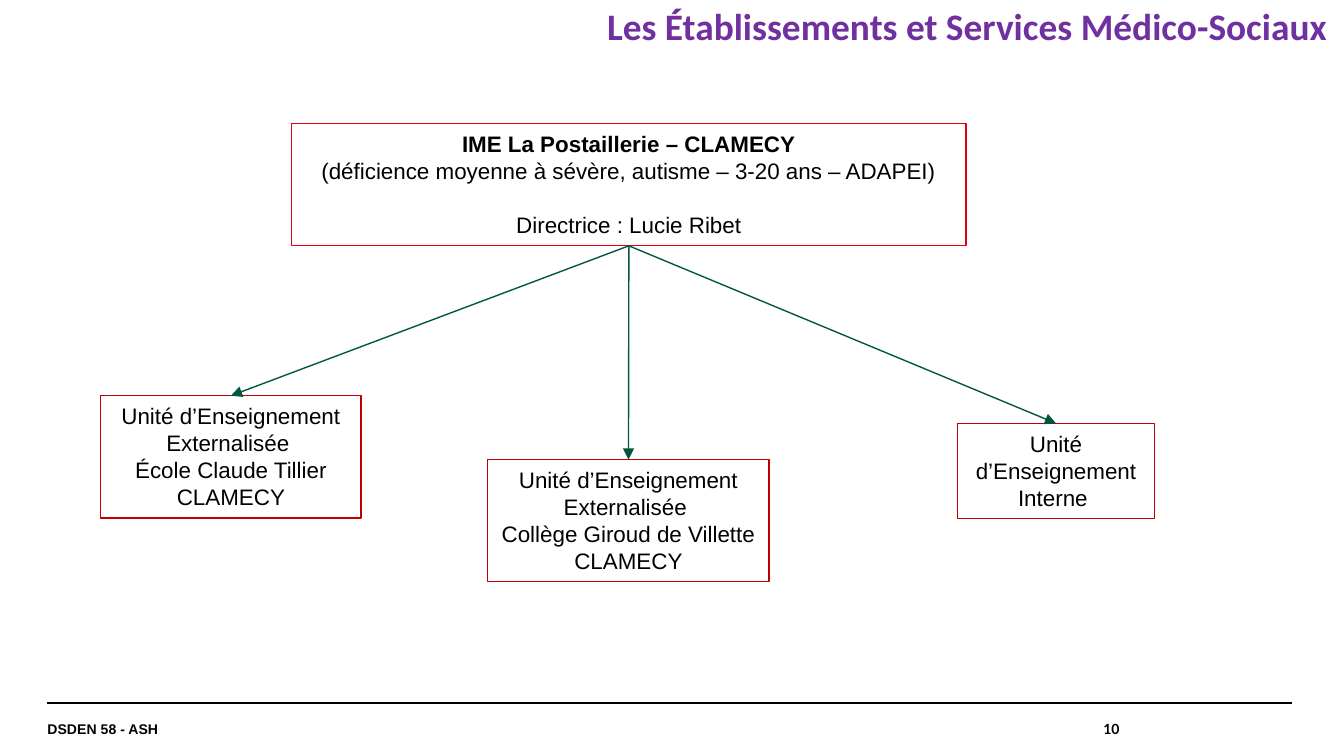
from dataclasses import dataclass

from lxml.etree import SubElement
from pptx import Presentation
from pptx.dml.color import RGBColor as Color
from pptx.enum.shapes import MSO_CONNECTOR as Connector, MSO_SHAPE as Preset
from pptx.enum.text import MSO_ANCHOR as Anchor, PP_ALIGN as Align
from pptx.oxml.ns import qn
from pptx.util import Pt


@dataclass(frozen=True)
class Theme:
    title: Color = Color(0x70, 0x30, 0xA0)
    text: Color = Color(0, 0, 0)
    school: Color = Color(0xE1, 0x00, 0x0F)
    unit: Color = Color(0xC0, 0, 0)
    arrow: Color = Color(0x00, 0x56, 0x40)
    title_size: float = 20
    body_size: float = 12
    footer_size: float = 7.5
    thin: float = 0.75


@dataclass(frozen=True)
class Area:
    left: float
    top: float
    width: float
    height: float

    @property
    def center(self) -> float:
        return self.left + self.width / 2

    @property
    def bottom(self) -> float:
        return self.top + self.height


@dataclass(frozen=True)
class Node:
    area: Area
    lines: tuple[str, ...]
    color: Color


@dataclass(frozen=True)
class Label:
    area: Area
    text: str
    font: str
    size: float
    color: Color
    align: Align
    anchor: Anchor
    spacing: float = 1


THEME = Theme()

SCHOOL = Node(
    Area(156.2, 66.2, 361.4, 65.5),
    (
        "IME La Postaillerie – CLAMECY",
        "(déficience moyenne à sévère, autisme – 3-20 ans – ADAPEI)",
        "Directrice : Lucie Ribet",
    ),
    THEME.school,
)
UNITS = (
    Node(
        Area(54, 212, 139.5, 65.5),
        ("Unité d’Enseignement Externalisée ", "École Claude Tillier CLAMECY"),
        THEME.unit,
    ),
    Node(
        Area(261.3, 246.2, 150.8, 65.5),
        ("Unité d’Enseignement Externalisée ", "Collège Giroud de Villette ", "CLAMECY"),
        THEME.unit,
    ),
    Node(Area(513, 226.8, 105.5, 51), ("Unité d’Enseignement Interne ",), THEME.unit),
)
LABELS = (
    Label(Area(25.4, 376.6, 459.4, 28), "DSDEN 58 - ASH", "Arial",
          THEME.footer_size, THEME.text, Align.LEFT, Anchor.MIDDLE),
    Label(Area(493.2, 376.6, 106.6, 28), "10", "Lato",
          THEME.footer_size, THEME.text, Align.RIGHT, Anchor.MIDDLE),
    Label(Area(280.8, 4.3, 430.3, 22.3), "Les Établissements et Services Médico-Sociaux",
          "Calibri", THEME.title_size, THEME.title, Align.RIGHT, Anchor.TOP, 0.9),
)


def place(area: Area) -> tuple[Pt, Pt, Pt, Pt]:
    return Pt(area.left), Pt(area.top), Pt(area.width), Pt(area.height)


def style_runs(para, font: str, size: float, color: Color, bold: bool) -> None:
    for span in para.runs:
        span.font.name = font
        span.font.size = Pt(size)
        span.font.color.rgb = color
        span.font.bold = bold


def draw_label(page, label: Label) -> None:
    frame = page.shapes.add_textbox(*place(label.area)).text_frame
    frame.word_wrap = True
    frame.margin_left = frame.margin_right = frame.margin_top = frame.margin_bottom = 0
    frame.vertical_anchor = label.anchor
    frame.text = label.text
    para = frame.paragraphs[0]
    para.alignment = label.align
    para.line_spacing = label.spacing
    style_runs(para, label.font, label.size, label.color, True)


def draw_node(page, node: Node):
    box = page.shapes.add_shape(Preset.RECTANGLE, *place(node.area))
    box.shadow.inherit = False
    box.fill.background()
    box.line.color.rgb = node.color
    box.line.width = Pt(THEME.thin)
    frame = box.text_frame
    frame.word_wrap = True
    frame.vertical_anchor = Anchor.TOP
    frame.text = "\n".join(node.lines)
    for para in frame.paragraphs:
        para.alignment = Align.CENTER
        style_runs(para, "Arial", THEME.body_size, THEME.text, False)
    return box


def draw_line(page, start: tuple[float, float], end: tuple[float, float],
              color: Color, width: float):
    line = page.shapes.add_connector(
        Connector.STRAIGHT, *(Pt(value) for value in start + end))
    line.line.color.rgb = color
    line.line.width = Pt(width)
    SubElement(line._element.spPr, qn("a:effectLst"))
    return line


def draw_arrow(page, source: Area, target: Area) -> None:
    arrow = draw_line(page, (source.center, source.bottom),
                      (target.center, target.top), THEME.arrow, THEME.thin)
    SubElement(arrow.line._get_or_add_ln(), qn("a:tailEnd"), type="triangle")


def main() -> None:
    deck = Presentation()
    deck.slide_width, deck.slide_height = Pt(720), Pt(405)
    page = deck.slides.add_slide(deck.slide_layouts[6])
    draw_line(page, (25.4, 376.6), (691.9, 376.6), THEME.text, 0.8)
    for label in LABELS:
        draw_label(page, label)

    heading, _, director = draw_node(page, SCHOOL).text_frame.paragraphs
    heading.runs[0].font.bold = True
    director.space_before = Pt(14.4)
    for unit in UNITS:
        draw_node(page, unit)
    for unit in UNITS:
        draw_arrow(page, SCHOOL.area, unit.area)
    deck.save("out.pptx")


if __name__ == "__main__":
    main()
